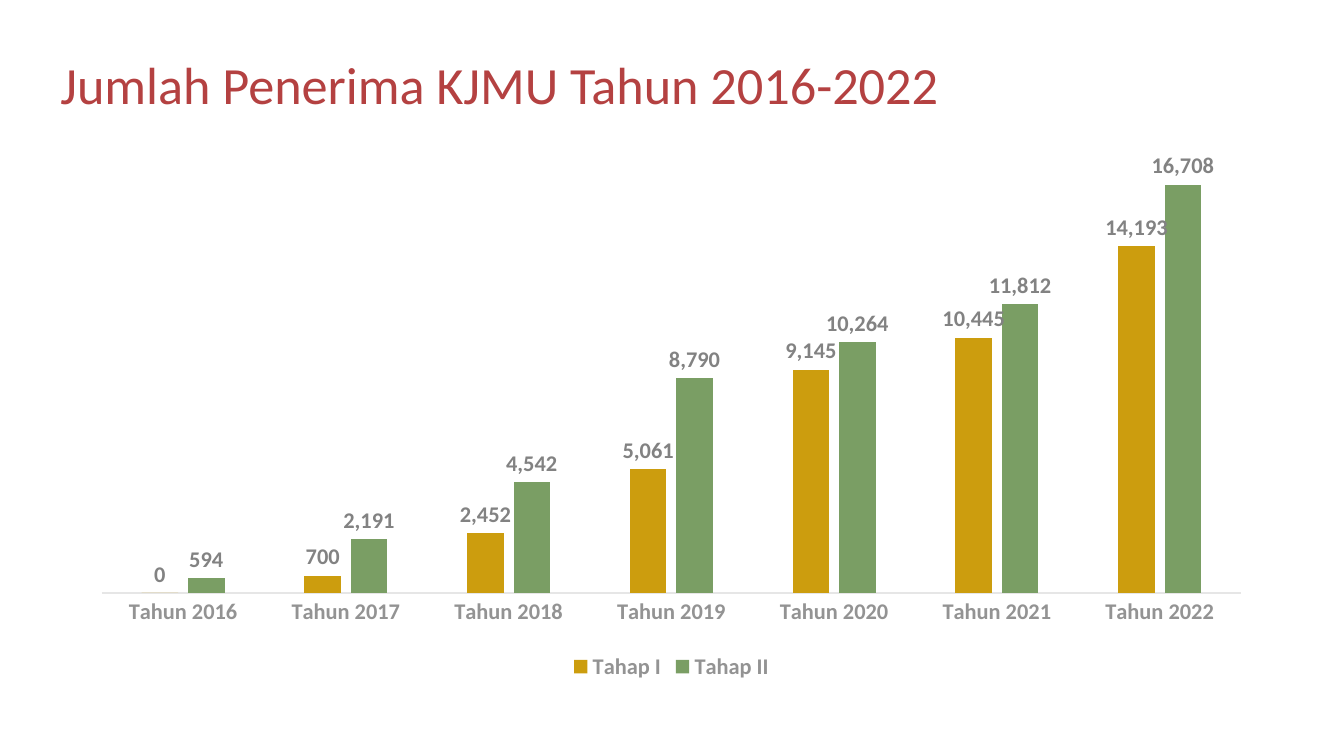
from dataclasses import dataclass

from lxml import etree
from pptx import Presentation
from pptx import util as u
from pptx.chart.data import CategoryChartData
from pptx.dml.color import RGBColor
from pptx.enum import chart as ch
from pptx.enum import text
from pptx.oxml.ns import qn

FONT = "Calibri"
COLORS = {
    "title": "B44141",
    "axis_text": "939393",
    "axis_line": "E6E6E6",
    "label": "828282",
    "gold": "CC9D0E",
    "green": "7A9E64",
}
YEARS = range(2016, 2023)


@dataclass
class Phase:
    name: str
    values: tuple[int, ...]
    color: str


PHASES = [
    Phase("Tahap I", (0, 700, 2452, 5061, 9145, 10445, 14193), "gold"),
    Phase("Tahap II", (594, 2191, 4542, 8790, 10264, 11812, 16708), "green"),
]


def rgb(name: str) -> RGBColor:
    return RGBColor.from_string(COLORS[name])


def style_font(font, size: float, color: str, bold: bool) -> None:
    font.name = FONT
    font.size = u.Pt(size)
    font.bold = bold
    font.color.rgb = rgb(color)


def place_plot(chart, x: float, y: float, w: float, h: float) -> None:
    """Fix the inner plot area, as fractions of the chart frame."""
    area = chart._chartSpace.chart.plotArea
    for old in area.findall(qn("c:layout")):
        area.remove(old)
    layout = etree.Element(qn("c:layout"))
    manual = etree.SubElement(layout, qn("c:manualLayout"))
    settings = {"layoutTarget": "inner", "xMode": "edge", "yMode": "edge",
                "x": x, "y": y, "w": w, "h": h}
    for tag, value in settings.items():
        etree.SubElement(manual, qn(f"c:{tag}"), val=str(value))
    area.insert(0, layout)


def add_title(slide, wording: str) -> None:
    sp = slide.shapes.title
    sp.left, sp.top, sp.width, sp.height = map(u.Pt, (25.2, 20.9, 564.5, 45.4))
    tf = sp.text_frame
    tf.text = wording
    tf.word_wrap = True
    tf.auto_size = text.MSO_AUTO_SIZE.NONE
    tf.vertical_anchor = text.MSO_ANCHOR.TOP
    tf.margin_left = tf.margin_right = tf.margin_top = tf.margin_bottom = u.Pt(7.2)
    p = tf.paragraphs[0]
    p.alignment = text.PP_ALIGN.LEFT
    style_font(p.runs[0].font, 28, "title", False)


def add_recipient_chart(slide, phases: list[Phase]) -> None:
    data = CategoryChartData(number_format="#,##0")
    data.categories = [f"Tahun {year}" for year in YEARS]
    for phase in phases:
        data.add_series(phase.name, phase.values)
    frame = slide.shapes.add_chart(
        ch.XL_CHART_TYPE.COLUMN_CLUSTERED,
        *map(u.Pt, (41.8, 76.3, 635.8, 290.9)), data)
    chart = frame.chart
    chart.has_title = False
    style_font(chart.font, 12, "axis_text", True)

    chart.has_legend = True
    chart.legend.position = ch.XL_LEGEND_POSITION.BOTTOM
    chart.legend.include_in_layout = False
    style_font(chart.legend.font, 12, "axis_text", True)

    axis = chart.category_axis
    axis.major_tick_mark = axis.minor_tick_mark = ch.XL_TICK_MARK.NONE
    axis.format.line.color.rgb = rgb("axis_line")
    axis.format.line.width = u.Pt(0.75)
    style_font(axis.tick_labels.font, 12, "axis_text", True)

    values = chart.value_axis
    values.visible = False
    values.has_major_gridlines = False
    values.minimum_scale, values.maximum_scale = 0, 18000

    plot = chart.plots[0]
    plot.gap_width, plot.overlap = 219, -27
    plot.vary_by_categories = False
    for series, phase in zip(plot.series, phases):
        series.format.fill.solid()
        series.format.fill.fore_color.rgb = rgb(phase.color)
        series.invert_if_negative = False
        labels = series.data_labels
        labels.show_value = True
        labels.number_format = "#,##0"
        labels.number_format_is_linked = False
        labels.position = ch.XL_LABEL_POSITION.OUTSIDE_END
        style_font(labels.font, 12, "label", True)
    place_plot(chart, 0.02, 0.02, 0.96, 0.81)


def main() -> None:
    prs = Presentation()
    prs.slide_width, prs.slide_height = u.Pt(720), u.Pt(405)
    slide = prs.slides.add_slide(prs.slide_layouts[5])
    add_title(slide, "Jumlah Penerima KJMU Tahun 2016-2022")
    add_recipient_chart(slide, PHASES)
    prs.save("out.pptx")


if __name__ == "__main__":
    main()
